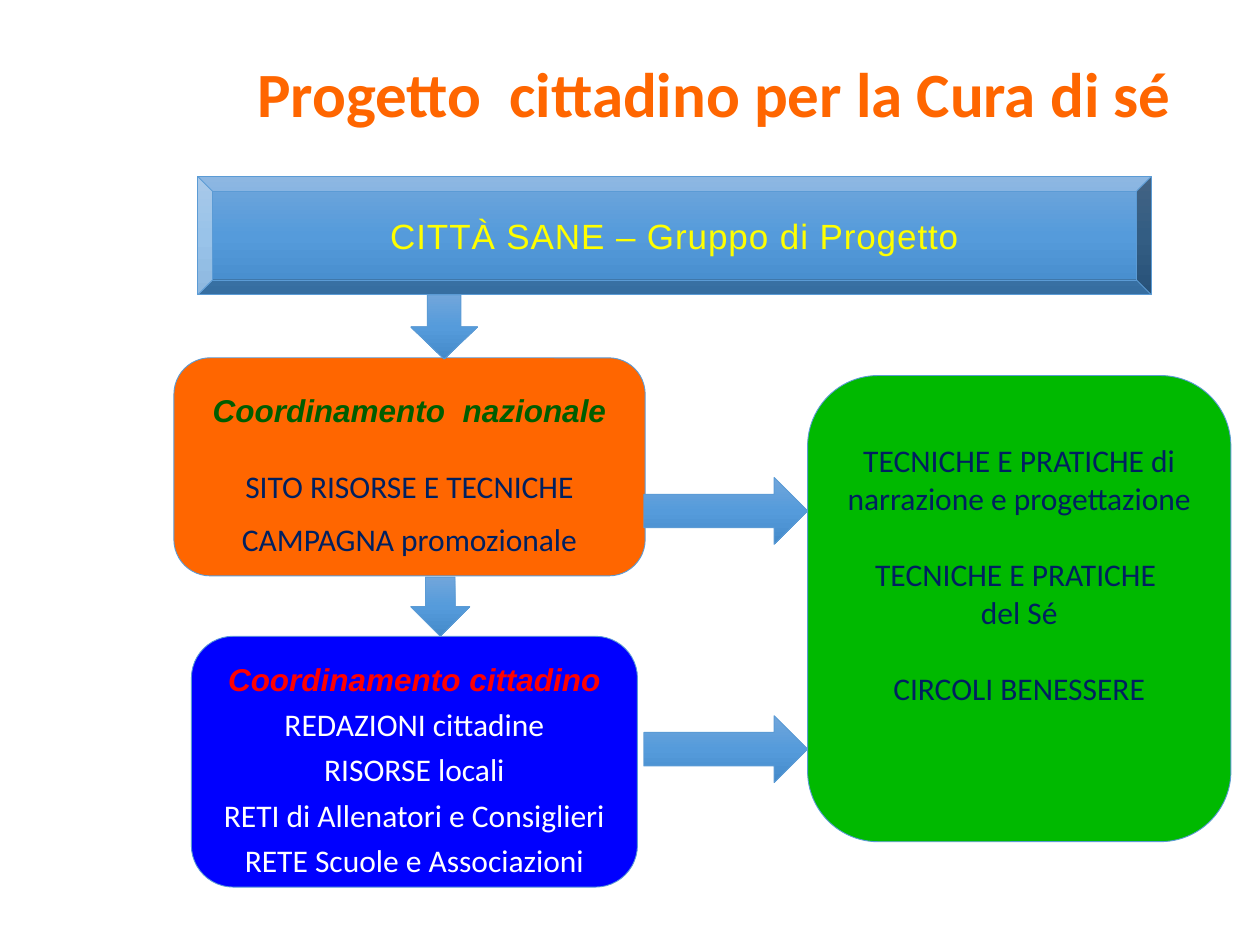
from copy import deepcopy

from pptx import Presentation
from pptx.dml.color import RGBColor
from pptx.enum.shapes import MSO_SHAPE
from pptx.enum.text import MSO_ANCHOR, PP_ALIGN
from pptx.util import Pt

COLORS = {
    "orange": "FF6600", "green": "00B900", "blue": "0000FF",
    "outline": "5B9BD5", "navy": "002060", "white": "FFFFFF",
    "yellow": "FFFF00", "forest": "005D00", "red": "FF0000",
    "light": "71A6DB", "mid": "559BDB", "deep": "448ACA",
}


def rgb(name):
    return RGBColor.from_string(COLORS[name])


def write(paragraph, text, color, size=18, font="Calibri", strong=False,
          slanted=False, spacing=1.0, before=0):
    paragraph.text = text
    paragraph.alignment = PP_ALIGN.CENTER
    paragraph.line_spacing = spacing
    paragraph.space_before = Pt(before)
    for run in paragraph.runs:
        run.font.name = font
        run.font.size = Pt(size)
        run.font.bold = strong
        run.font.italic = slanted
        run.font.color.rgb = rgb(color)


def add_outlined(slide, preset, box):
    block = slide.shapes.add_shape(preset, *map(Pt, box))
    block.shadow.inherit = False
    block.line.color.rgb = rgb("outline")
    block.line.width = Pt(0.5)
    return block


def add_shaded(slide, preset, box):
    block = add_outlined(slide, preset, box)
    block.fill.gradient()
    block.fill.gradient_angle = 270
    first = block.fill.gradient_stops[0]._gs
    first.addnext(deepcopy(first))
    for stop, color, position in zip(block.fill.gradient_stops,
                                     ("light", "mid", "deep"), (0, 0.5, 1)):
        stop.color.rgb = rgb(color)
        stop.position = position
    return block


def add_title(slide, box):
    frame = slide.shapes.add_textbox(*map(Pt, box)).text_frame
    frame.word_wrap = True
    frame.vertical_anchor = MSO_ANCHOR.MIDDLE
    write(frame.paragraphs[0], "Progetto  cittadino per la Cura di sé",
          "orange", size=36, strong=True, spacing=0.9)


def add_banner(slide, box):
    frame = add_shaded(slide, MSO_SHAPE.BEVEL, box).text_frame
    frame.vertical_anchor = MSO_ANCHOR.MIDDLE
    heading = frame.paragraphs[0]
    write(heading, "CITTÀ SANE – Gruppo di Progetto", "yellow", size=20, font="Arial")
    heading.runs[0].font._element.set("spc", "50")


def add_card(slide, box, fill, lines, margin_top):
    card = add_outlined(slide, MSO_SHAPE.ROUNDED_RECTANGLE, box)
    card.fill.solid()
    card.fill.fore_color.rgb = rgb(fill)
    frame = card.text_frame
    frame.word_wrap = True
    frame.vertical_anchor = MSO_ANCHOR.TOP
    frame.margin_top = Pt(margin_top)
    frame.margin_bottom = 0
    for index, (text, style) in enumerate(lines):
        paragraph = frame.add_paragraph() if index else frame.paragraphs[0]
        write(paragraph, text, **style)


def add_techniques(slide, box):
    plain = {"color": "navy"}
    spaced = {"color": "navy", "before": 22}
    add_card(slide, box, "green", [
        ("TECNICHE E PRATICHE di narrazione e progettazione", plain),
        ("TECNICHE E PRATICHE ", spaced),
        ("del Sé", plain),
        ("CIRCOLI BENESSERE", spaced),
    ], 25.6)


def add_coordination(slide, box, fill, heading, heading_color, items,
                     item_color, spacing, gap, margin_top):
    lines = [(heading, {"color": heading_color, "font": "Arial", "strong": True,
                        "slanted": True, "spacing": spacing})]
    for index, item in enumerate(items):
        lines.append((item, {"color": item_color, "spacing": spacing,
                             "before": 0 if index else gap}))
    add_card(slide, box, fill, lines, margin_top)


def main():
    deck = Presentation()
    deck.slide_width, deck.slide_height = Pt(720), Pt(540)
    slide = deck.slides.add_slide(deck.slide_layouts[6])

    add_title(slide, (113, 21.6, 590.4, 67.7))
    add_banner(slide, (113, 100.8, 545, 67.7))
    add_techniques(slide, (461.5, 214.6, 241.9, 266.4))
    add_coordination(slide, (99.4, 204.5, 269.3, 124.6), "orange",
                     "Coordinamento  nazionale", "forest",
                     ["SITO RISORSE E TECNICHE", "CAMPAGNA promozionale"],
                     "navy", 1.4, 13.7, 4)
    add_coordination(slide, (109.4, 363.6, 254.9, 143.3), "blue",
                     "Coordinamento cittadino", "red",
                     ["REDAZIONI cittadine", "RISORSE locali",
                      "RETI di Allenatori e Consiglieri",
                      "RETE Scuole e Associazioni"],
                     "white", 1.2, 0, 2)
    for top in (272.9, 409):
        add_shaded(slide, MSO_SHAPE.RIGHT_ARROW, (367.9, top, 93.6, 38.2))
    for top, width, height in ((168.5, 38.2, 36.7), (329.8, 33.8, 33.8)):
        add_shaded(slide, MSO_SHAPE.DOWN_ARROW, (234.7, top, width, height))

    deck.save("out.pptx")


if __name__ == "__main__":
    main()
